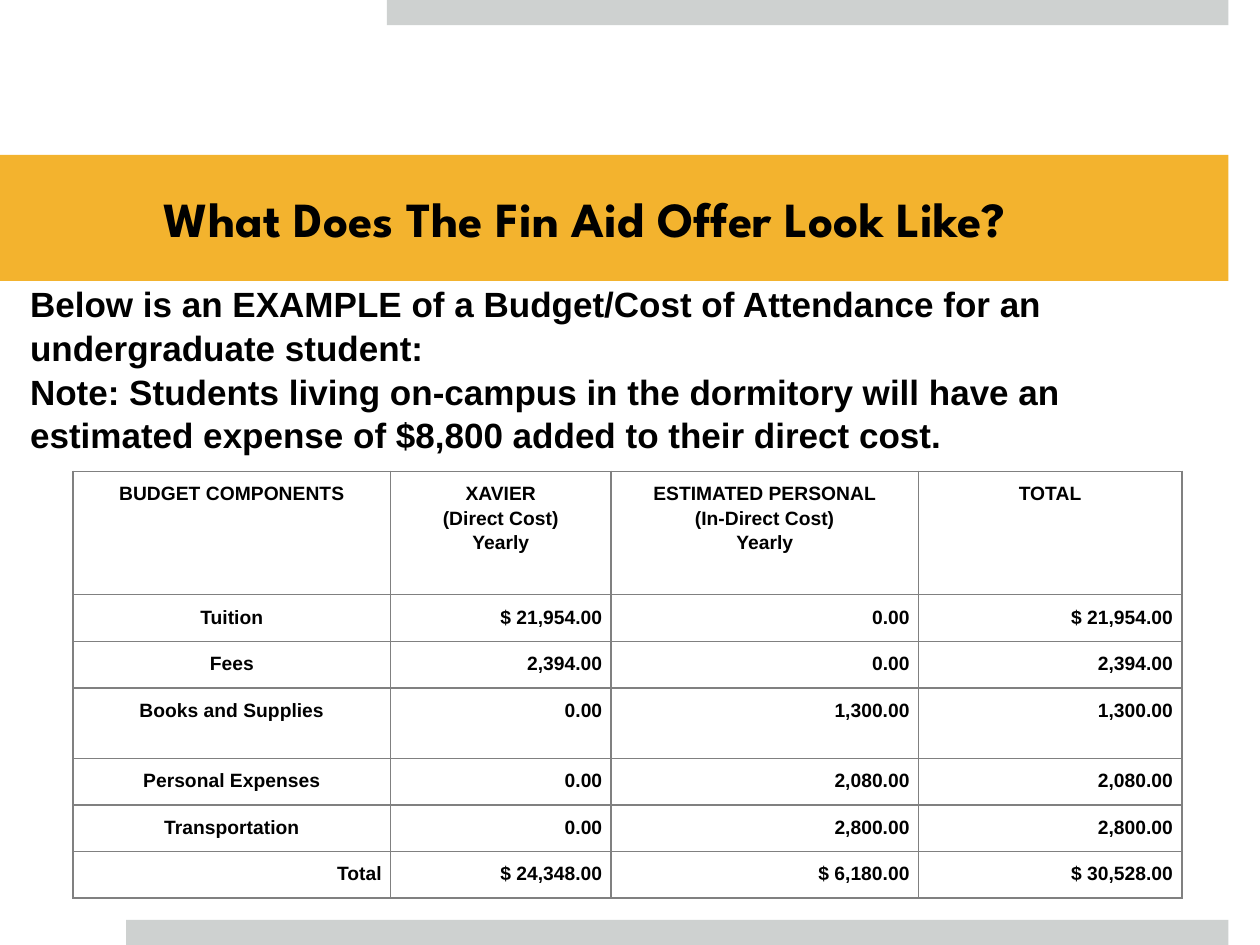
from lxml import etree
from pptx import Presentation
from pptx.dml.color import RGBColor
from pptx.enum import shapes, text
from pptx.util import Inches, Pt

# Content
TITLE = "What Does The Fin Aid Offer Look Like?"
INTRO = [
    "Below is an EXAMPLE of a Budget/Cost of Attendance for an undergraduate student:",
    "Note: Students living on-campus in the dormitory will have an estimated "
    "expense of $8,800 added to their direct cost.",
]
ROWS = [
    (["BUDGET COMPONENTS"], ["XAVIER", "(Direct Cost)", "Yearly"],
     ["ESTIMATED PERSONAL", "(In-Direct Cost)", "Yearly"], ["TOTAL"]),
    (["Tuition"], ["$ 21,954.00"], ["0.00"], ["$ 21,954.00"]),
    (["Fees"], ["2,394.00"], ["0.00"], ["2,394.00"]),
    (["Books and Supplies"], ["0.00"], ["1,300.00"], ["1,300.00"]),
    (["Personal Expenses"], ["0.00"], ["2,080.00"], ["2,080.00"]),
    (["Transportation"], ["0.00"], ["2,800.00"], ["2,800.00"]),
    (["Total"], ["$ 24,348.00"], ["$ 6,180.00"], ["$ 30,528.00"]),
]
COLS = [2.52, 1.75, 2.44, 2.09]
HIGH = [0.98, 0.37, 0.37, 0.56, 0.37, 0.37, 0.37]
BARS = [(3.07, 0, 6.68, 0.2), (1, 7.3, 8.75, 0.2)]
GRAY, GOLD, EDGE, BLACK = "CED1D0", "F3B32E", "808080", "000000"
NS = "http://schemas.openxmlformats.org/drawingml/2006/main"
SIDES = ("left", "top", "right", "bottom")
ALIGN = text.PP_ALIGN


def paint(fill, hue):
    fill.solid()
    fill.fore_color.rgb = RGBColor.from_string(hue)


def place(shape, box):
    for name, size in zip(("left", "top", "width", "height"), box):
        setattr(shape, name, Inches(size))


def inset(part, sizes):
    for side, size in zip(SIDES, sizes):
        setattr(part, "margin_" + side, Inches(size))


def write(frame, lines, size, face="Arial", align=ALIGN.LEFT, space=1.0):
    look = {"size": Pt(size), "name": face, "bold": True}
    for i, line in enumerate(lines):
        para = frame.paragraphs[0] if i == 0 else frame.add_paragraph()
        para.alignment, para.line_spacing = align, space
        para.space_before = para.space_after = Pt(0)
        run = para.add_run()
        run.text = line
        for key, value in look.items():
            setattr(run.font, key, value)
        run.font.color.rgb = RGBColor.from_string(BLACK)


def border(cell):
    props = cell._tc.get_or_add_tcPr()
    for i, tag in enumerate(("lnL", "lnR", "lnT", "lnB")):
        line = etree.Element(f"{{{NS}}}{tag}", w=str(Pt(1)))
        fill = etree.SubElement(line, f"{{{NS}}}solidFill")
        etree.SubElement(fill, f"{{{NS}}}srgbClr", val=EDGE)
        props.insert(i, line)


deck = Presentation()
deck.slide_width, deck.slide_height = Inches(10), Inches(7.5)
slide = deck.slides.add_slide(deck.slide_layouts[5])

# Gray bars at top and bottom
for box in BARS:
    bar = slide.shapes.add_shape(shapes.MSO_SHAPE.RECTANGLE, *map(Inches, box))
    bar.shadow.inherit = False
    paint(bar.fill, GRAY)
    bar.line.fill.background()

# Title band
title = slide.shapes.title
place(title, (0, 1.23, 9.75, 1))
paint(title.fill, GOLD)
frame = title.text_frame
frame.word_wrap = True
frame.auto_size = text.MSO_AUTO_SIZE.NONE
frame.vertical_anchor = text.MSO_ANCHOR.MIDDLE
inset(frame, (1.3, 0.05, 0.3, 0.05))
write(frame, [TITLE], 28, "League Spartan")

# Budget table
grid = slide.shapes.add_table(
    len(ROWS), len(COLS), Inches(0.58), Inches(3.74),
    Inches(sum(COLS)), Inches(sum(HIGH))).table
grid.first_row = grid.horz_banding = False
for col, wide in zip(grid.columns, COLS):
    col.width = Inches(wide)
for row, tall in zip(grid.rows, HIGH):
    row.height = Inches(tall)
for r, row in enumerate(ROWS):
    for c, lines in enumerate(row):
        cell = grid.cell(r, c)
        cell.fill.background()
        border(cell)
        inset(cell, [0.07] * 4)
        mid = r == 0 or (c == 0 and r < len(ROWS) - 1)
        write(cell.text_frame, lines, 11, space=1.15,
              align=ALIGN.CENTER if mid else ALIGN.RIGHT)

# Introduction
intro = slide.shapes.add_textbox(*map(Inches, (0.14, 2.2, 9.61, 1.45)))
frame = intro.text_frame
frame.word_wrap = True
frame.vertical_anchor = text.MSO_ANCHOR.MIDDLE
write(frame, INTRO, 20, space=1.04)

deck.save("out.pptx")
